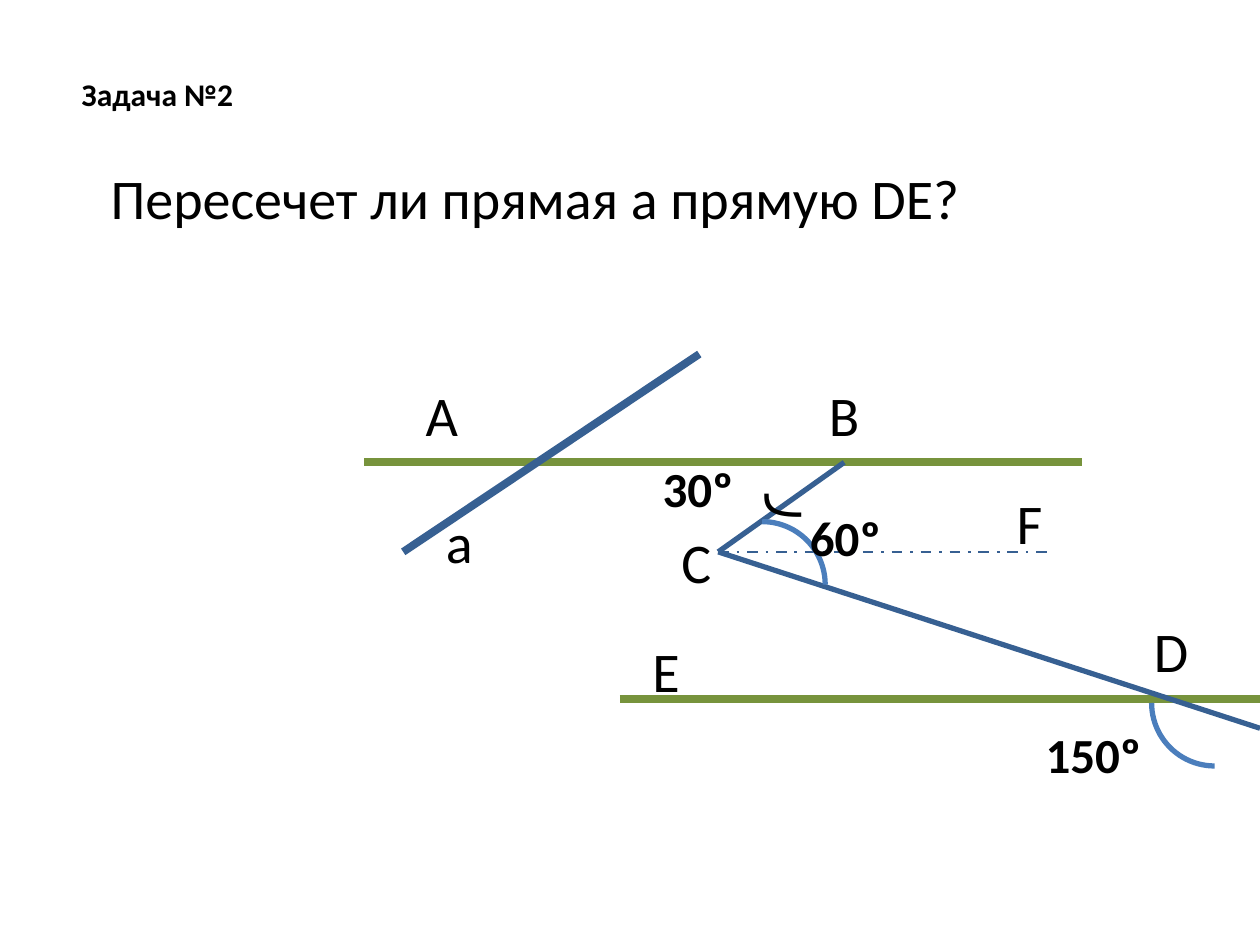
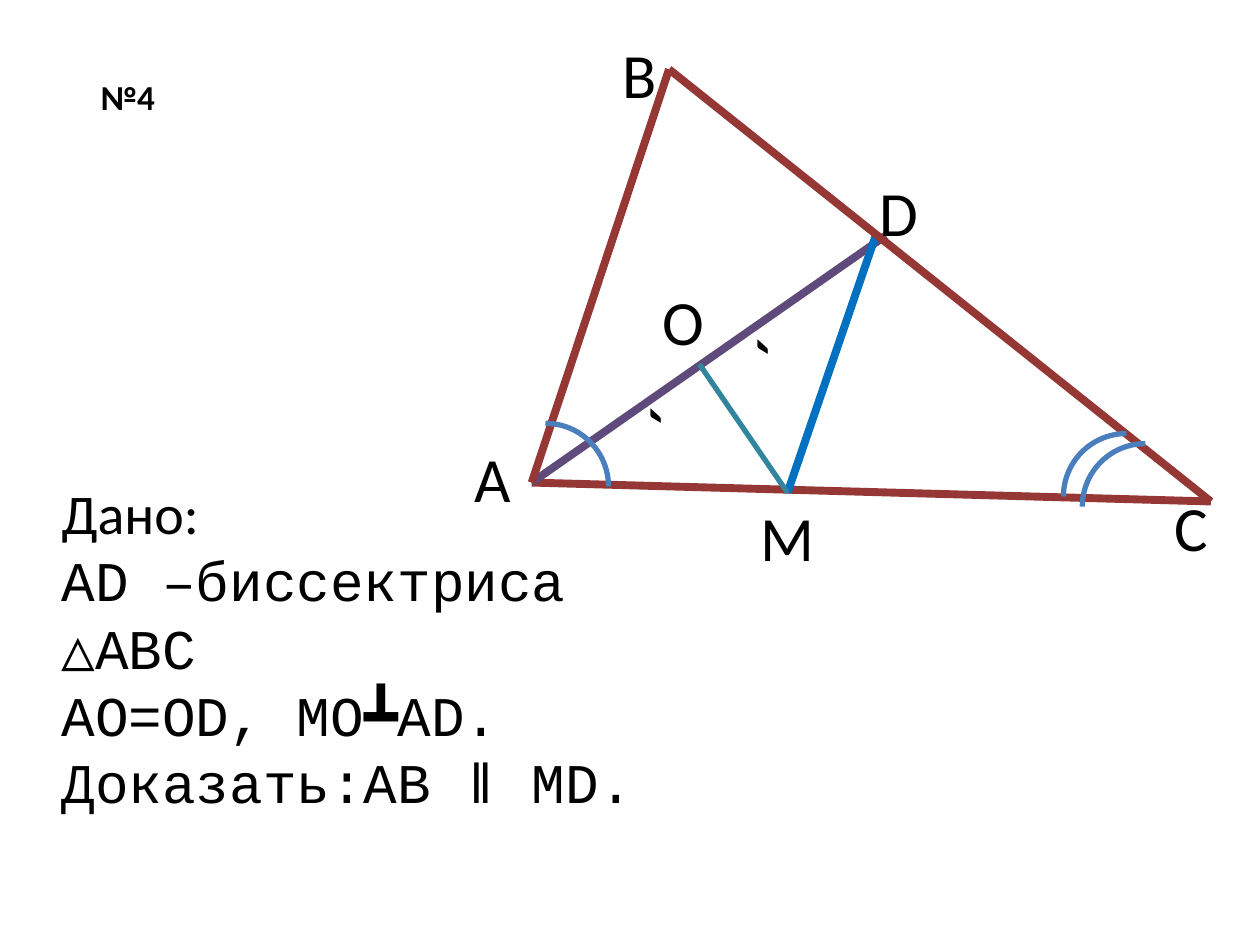
from dataclasses import dataclass

from pptx import Presentation
from pptx.dml.color import RGBColor
from pptx.enum.dml import MSO_LINE
from pptx.enum.shapes import MSO_CONNECTOR, MSO_SHAPE
from pptx.oxml.ns import qn
from pptx.slide import Slide
from pptx.util import Inches, Pt

STRAIGHT = MSO_CONNECTOR.STRAIGHT
ARC = MSO_SHAPE.ARC
DASH = MSO_LINE.DASH_DOT

SANS = "Calibri"
MONO = "Courier New"
BLACK = "000000"
GREEN = "77933C"
NAVY = "376092"
SKY = "4B7EBC"
RED = "953735"
PLUM = "604A7B"
BLUE = "0070C0"
TEAL = "31859C"
THICK = 4.5
THIN = 3

Point = tuple[float, float]


@dataclass
class Label:
    text: str
    left: float
    top: float
    wide: float
    high: float
    size: int
    bold: bool = False
    font: str = SANS
    turn: int = 0


@dataclass
class Edge:
    start: Point
    end: Point
    color: str
    width: float
    dash: bool = False


@dataclass
class Angle:
    left: float
    top: float
    turn: int = 0
    flip: bool = False


def paint(code: str) -> RGBColor:
    return RGBColor.from_string(code)


def write(slide: Slide, label: Label, *more: tuple[str, str]) -> None:
    box = slide.shapes.add_textbox(
        Inches(label.left), Inches(label.top), Inches(label.wide), Inches(label.high)
    )
    box.rotation = label.turn
    frame = box.text_frame
    frame.word_wrap = True
    for index, (text, font) in enumerate([(label.text, label.font), *more]):
        para = frame.add_paragraph() if index else frame.paragraphs[0]
        run = para.add_run()
        run.text = text
        run.font.name = font
        run.font.size = Pt(label.size)
        run.font.bold = label.bold
        run.font.color.rgb = paint(BLACK)


def draw_edge(slide: Slide, edge: Edge) -> None:
    ends = [Inches(value) for value in (*edge.start, *edge.end)]
    line = slide.shapes.add_connector(STRAIGHT, *ends)
    line.line.color.rgb = paint(edge.color)
    line.line.width = Pt(edge.width)
    if edge.dash:
        line.line.dash_style = DASH
    props = line._element.spPr
    props.append(props.makeelement(qn("a:effectLst"), {}))


def draw_angle(slide: Slide, angle: Angle) -> None:
    arc = slide.shapes.add_shape(
        ARC, Inches(angle.left), Inches(angle.top), Inches(1), Inches(1)
    )
    arc.shadow.inherit = False
    arc.fill.background()
    arc.line.color.rgb = paint(SKY)
    arc.line.width = Pt(THIN)
    arc.rotation = angle.turn
    if angle.flip:
        arc._element.spPr.find(qn("a:xfrm")).set("flipV", "1")


def draw(
    slide: Slide, edges: list[Edge], angles: list[Angle], labels: list[Label]
) -> None:
    for edge in edges:
        draw_edge(slide, edge)
    for angle in angles:
        draw_angle(slide, angle)
    for label in labels:
        write(slide, label)


def letter(text: str, left: float, top: float, wide: float) -> Label:
    return Label(text, left, top, wide, 0.64, 32)


def vertex(text: str, left: float, top: float, wide: float) -> Label:
    return Label(text, left, top, wide, 0.71, 36)


def degree(text: str, left: float, top: float, wide: float) -> Label:
    return Label(text, left, top, wide, 0.57, 28, bold=True)


def tick(left: float, top: float) -> Label:
    return Label("´", left, top, 0.59, 0.84, 44, turn=270)


def build_lines(slide: Slide) -> None:
    b, c = (6.7, 3.67), (5.7, 4.38)
    edges = [
        Edge((2.89, 3.67), (8.59, 3.67), GREEN, THICK),
        Edge((4.92, 5.55), (10, 5.55), GREEN, THICK),
        Edge(b, c, NAVY, THIN),
        Edge(c, (10, 5.78), NAVY, THIN),
        Edge((5.55, 2.81), (3.2, 4.38), NAVY, THICK),
        Edge(c, (8.36, 4.38), NAVY, 1.5, dash=True),
    ]
    angles = [Angle(5.55, 4.14), Angle(9.14, 5.08, 90, flip=True)]
    labels = [
        Label("Задача №2", 0.55, 0.55, 1.83, 0.4, 18, bold=True),
        letter("Пересечет ли прямая а прямую DЕ?", 0.78, 1.25, 8.61),
        letter("А", 3.28, 2.97, 0.51),
        letter("В", 6.48, 2.97, 0.51),
        letter("D", 9.06, 4.84, 0.55),
        letter("Е", 5.08, 5, 0.49),
        letter("С", 5.31, 4.14, 0.52),
        letter("а", 3.44, 3.98, 0.47),
        letter("F", 7.97, 3.83, 0.46),
        degree("60º", 6.33, 3.98, 0.99),
        degree("150º", 8.2, 5.7, 1.27),
        degree("30º", 5.16, 3.59, 0.99),
        Label("╭", 5.63, 3.59, 0.76, 0.77, 40, font=MONO, turn=270),
    ]
    draw(slide, edges, angles, labels)


def build_proof(slide: Slide) -> None:
    a, b, c = (4.22, 3.83), (5.31, 0.55), (9.61, 3.98)
    m, o = (6.25, 3.91), (5.55, 2.89)
    edges = [
        Edge(a, c, RED, THICK),
        Edge((7.03, 1.87), a, PLUM, THICK),
        Edge(a, b, RED, THICK),
        Edge(m, (6.95, 1.87), BLUE, THICK),
        Edge(b, c, RED, THICK),
        Edge(m, o, TEAL, THIN),
    ]
    angles = [Angle(3.83, 3.36), Angle(8.44, 3.44, 270), Angle(8.59, 3.52, 270)]
    labels = [
        Label("№4", 0.7, 0.55, 0.76, 0.44, 20, bold=True),
        vertex("D", 6.88, 1.33, 0.59),
        vertex("B", 4.84, 0.23, 0.55),
        vertex("A", 3.67, 3.44, 0.55),
        vertex("C", 9.22, 3.83, 0.55),
        vertex("M", 5.94, 3.91, 0.63),
        vertex("O", 5.16, 2.19, 0.6),
        tick(5.9, 2.22),
        tick(5.05, 2.77),
    ]
    draw(slide, edges, angles, labels)
    write(
        slide,
        Label("Дано:", 0.39, 3.75, 5.36, 2.26, 32),
        ("AD –биссектриса △ABC", MONO),
        ("AO=OD, MO┻AD.", MONO),
        ("Доказать:AB ǁ MD.", MONO),
    )


def main() -> None:
    deck = Presentation()
    deck.slide_width = Inches(10)
    deck.slide_height = Inches(7.5)
    blank = deck.slide_layouts[6]
    for build in (build_lines, build_proof):
        build(deck.slides.add_slide(blank))
    deck.save("out.pptx")


if __name__ == "__main__":
    main()
